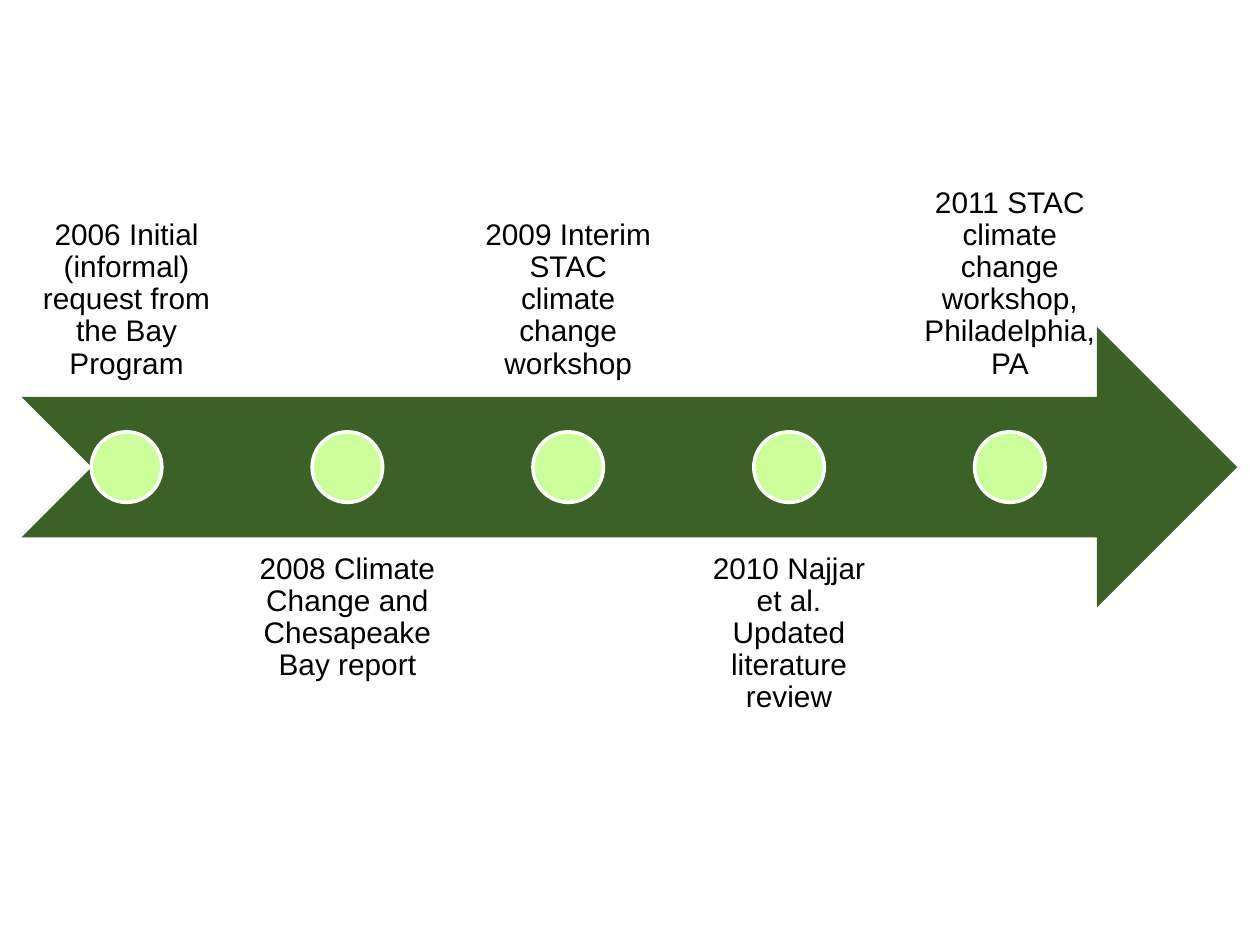
from pptx import Presentation
from pptx import util as u
from pptx.dml import color
from pptx.enum import shapes, text

WIDE, HIGH = 10, 7.5
LEFT, STEP = 0.17, 1.7525
BAND, TOP = 2.23, 0.92
MID = TOP + 1.25 * BAND
COL, DOT = 1.67, 0.56
STOPS = [
    "2006 Initial (informal) request from the Bay Program",
    "2008 Climate Change and Chesapeake Bay report",
    "2009 Interim STAC climate change workshop",
    "2010 Najjar et al. Updated literature review",
    "2011 STAC climate change workshop, Philadelphia, PA",
]


def tint(hue):
    """Turn a hex string into a colour."""
    return color.RGBColor.from_string(hue)


def apply(item, form):
    """Set each attribute named in a dict."""
    for name, value in form.items():
        setattr(item, name, value)


def box(*sides):
    """Turn left, top, width and height in inches into lengths."""
    return [u.Inches(side) for side in sides]


def draw(group, kind, place, fill, line=None):
    """Add a flat filled shape, with an outline if a colour is given."""
    shape = group.shapes.add_shape(kind, *box(*place))
    shape.shadow.inherit = False
    shape.fill.solid()
    shape.fill.fore_color.rgb = tint(fill)
    if line:
        shape.line.color.rgb = tint(line)
        shape.line.width = u.Pt(2)
    else:
        shape.line.fill.background()


def label(group, words, place, anchor):
    """Add a centred, wrapped caption."""
    frame = group.shapes.add_textbox(*box(*place)).text_frame
    pad = u.Inches(0.13)
    apply(frame, {
        "word_wrap": True, "vertical_anchor": anchor,
        "margin_left": pad, "margin_right": pad,
        "margin_top": pad, "margin_bottom": pad,
    })
    para = frame.paragraphs[0]
    apply(para, {"alignment": text.PP_ALIGN.CENTER, "line_spacing": 0.9})
    run = para.add_run()
    run.text = words
    apply(run.font, {"name": "Arial", "size": u.Pt(17)})
    run.font.color.rgb = tint("000000")


def stop(group, col, words):
    """Add one dated stop, with captions above and below in turn."""
    left = LEFT + col * STEP
    below = col % 2
    top = TOP + below * 1.5 * BAND
    anchor = text.MSO_ANCHOR.TOP if below else text.MSO_ANCHOR.BOTTOM
    label(group, words, (left, top, COL, BAND), anchor)
    place = (left + (COL - DOT) / 2, MID - DOT / 2, DOT, DOT)
    draw(group, shapes.MSO_SHAPE.OVAL, place, "CCFF99", "FFFFFF")


def main():
    """Build the timeline slide."""
    deck = Presentation()
    apply(deck, {"slide_width": u.Inches(WIDE), "slide_height": u.Inches(HIGH)})
    slide = deck.slides.add_slide(deck.slide_layouts[6])
    group = slide.shapes.add_group_shape()
    draw(group, shapes.MSO_SHAPE.NOTCHED_RIGHT_ARROW,
         (LEFT, MID - BAND / 2, WIDE * 0.965, BAND), "3C6126")
    for col, words in enumerate(STOPS):
        stop(group, col, words)
    deck.save("out.pptx")


if __name__ == "__main__":
    main()
